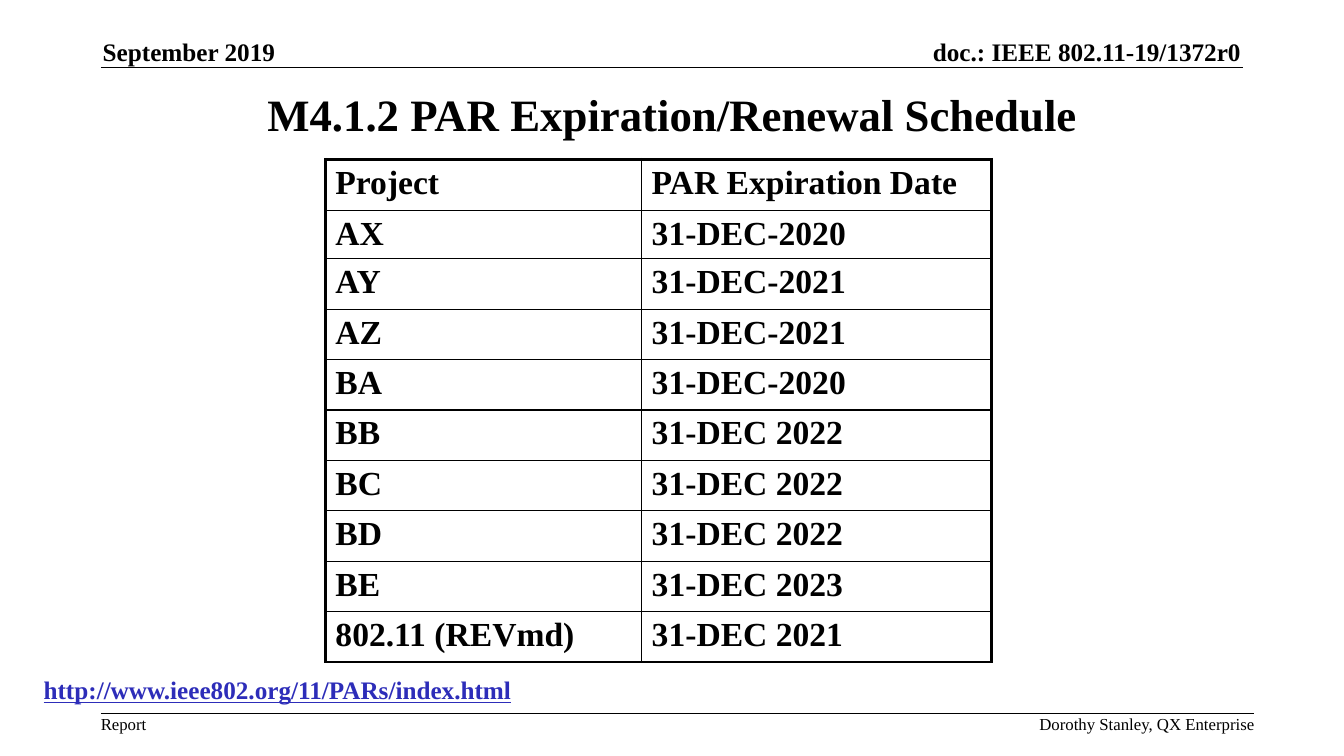
from lxml.etree import SubElement
from pptx import Presentation
from pptx.dml.color import RGBColor
from pptx.enum.shapes import MSO_CONNECTOR
from pptx.enum.text import MSO_ANCHOR, MSO_AUTO_SIZE, PP_ALIGN
from pptx.oxml.ns import qn
from pptx.util import Cm, Pt

FONT = "Times New Roman"
BLACK = "000000"
WHITE = "FFFFFF"
LINK_BLUE = "2D2DB9"
THIN, THICK = 1, 2.25

SCHEDULE = [
    ("Project", "PAR Expiration Date"),
    ("AX", "31-DEC-2020"),
    ("AY", "31-DEC-2021"),
    ("AZ", "31-DEC-2021"),
    ("BA", "31-DEC-2020"),
    ("BB", "31-DEC 2022"),
    ("BC", "31-DEC 2022"),
    ("BD", "31-DEC 2022"),
    ("BE", "31-DEC 2023"),
    ("802.11 (REVmd)", "31-DEC 2021"),
]
COLUMN_WIDTHS = (7.97, 8.81)
ROW_HEIGHT = 1.27
SPECIAL_HEIGHTS = {0: 1.3, 1: 1.21}


def colour(hex_string):
    return RGBColor.from_string(hex_string)


def write(frame, text, size=18, color=BLACK, bold=False, underline=False,
          align=PP_ALIGN.LEFT):
    paragraph = frame.paragraphs[0]
    paragraph.alignment = align
    run = paragraph.add_run()
    run.text = text
    font = run.font
    font.name, font.size, font.bold = FONT, Pt(size), bold
    font.underline = underline
    font.color.rgb = colour(color)


def add_label(slide, text, left, top, width, height, inset=0.0,
              anchor=MSO_ANCHOR.TOP, **text_format):
    label = slide.shapes.add_textbox(Cm(left), Cm(top), Cm(width), Cm(height))
    frame = label.text_frame
    frame.word_wrap = True
    frame.vertical_anchor = anchor
    frame.margin_left = frame.margin_right = Cm(inset)
    frame.margin_top = frame.margin_bottom = Cm(inset / 2)
    write(frame, text, **text_format)


def add_rule(slide, left, right, y):
    rule = slide.shapes.add_connector(
        MSO_CONNECTOR.STRAIGHT, Cm(left), Cm(y), Cm(right), Cm(y))
    rule.line.color.rgb = colour(BLACK)
    rule.line.width = Pt(THIN)
    SubElement(rule._element.spPr, qn("a:effectLst"))


def set_title(slide, text):
    title = slide.shapes.title
    title.left, title.top = Cm(6.15), Cm(1.9)
    title.width, title.height = Cm(21.59), Cm(1.9)
    frame = title.text_frame
    frame.auto_size = MSO_AUTO_SIZE.NONE
    frame.vertical_anchor = MSO_ANCHOR.MIDDLE
    write(frame, text, size=32, bold=True, align=PP_ALIGN.CENTER)


def set_borders(cell, left, right, top, bottom):
    properties = cell._tc.get_or_add_tcPr()
    sides = {"a:lnL": left, "a:lnR": right, "a:lnT": top, "a:lnB": bottom}
    for tag, width in sides.items():
        border = SubElement(properties, qn(tag), w=str(Pt(width)))
        fill = SubElement(border, qn("a:solidFill"))
        SubElement(fill, qn("a:srgbClr"), val=BLACK)


def add_schedule(slide, left, top):
    heights = [SPECIAL_HEIGHTS.get(i, ROW_HEIGHT) for i in range(len(SCHEDULE))]
    schedule = slide.shapes.add_table(
        len(SCHEDULE), len(COLUMN_WIDTHS), Cm(left), Cm(top),
        Cm(sum(COLUMN_WIDTHS)), Cm(sum(heights))).table
    for column, width in zip(schedule.columns, COLUMN_WIDTHS):
        column.width = Cm(width)
    for row, height in zip(schedule.rows, heights):
        row.height = Cm(height)

    last_column = len(COLUMN_WIDTHS) - 1
    for r, entries in enumerate(SCHEDULE):
        for c, entry in enumerate(entries):
            cell = schedule.cell(r, c)
            set_borders(cell,
                        left=THICK if c == 0 else THIN,
                        right=THICK if c == last_column else THIN,
                        top=THICK if r == 0 else THIN,
                        bottom=THIN)
            cell.fill.solid()
            cell.fill.fore_color.rgb = colour(WHITE)
            cell.margin_bottom = Cm(0.04)
            write(cell.text_frame, entry, size=24, bold=True)


def main():
    presentation = Presentation()
    presentation.slide_width, presentation.slide_height = Cm(33.87), Cm(19.05)
    slide = presentation.slides.add_slide(presentation.slide_layouts[5])

    # Header
    add_label(slide, "September 2019", 2.59, 0.91, 5, 0.77,
              anchor=MSO_ANCHOR.BOTTOM, bold=True)
    add_label(slide, "doc.: IEEE 802.11-19/1372r0", 22.02, 0.91, 9.25, 0.77,
              anchor=MSO_ANCHOR.BOTTOM, bold=True, align=PP_ALIGN.RIGHT)
    add_rule(slide, 2.54, 31.32, 1.7)

    # Title, schedule and source address
    set_title(slide, "M4.1.2 PAR Expiration/Renewal Schedule")
    add_schedule(slide, 8.2, 4.01)
    add_label(slide, "http://www.ieee802.org/11/PARs/index.html",
              0.85, 16.87, 13, 1.02, inset=0.25,
              color=LINK_BLUE, bold=True, underline=True)

    # Footer
    add_rule(slide, 2.54, 31.6, 17.98)
    add_label(slide, "Report", 2.54, 17.98, 1.5, 0.51, size=12)
    add_label(slide, "Dorothy Stanley, QX Enterprise", 25.6, 17.98, 6.02, 0.51,
              size=12, align=PP_ALIGN.RIGHT)

    presentation.save("out.pptx")


if __name__ == "__main__":
    main()
